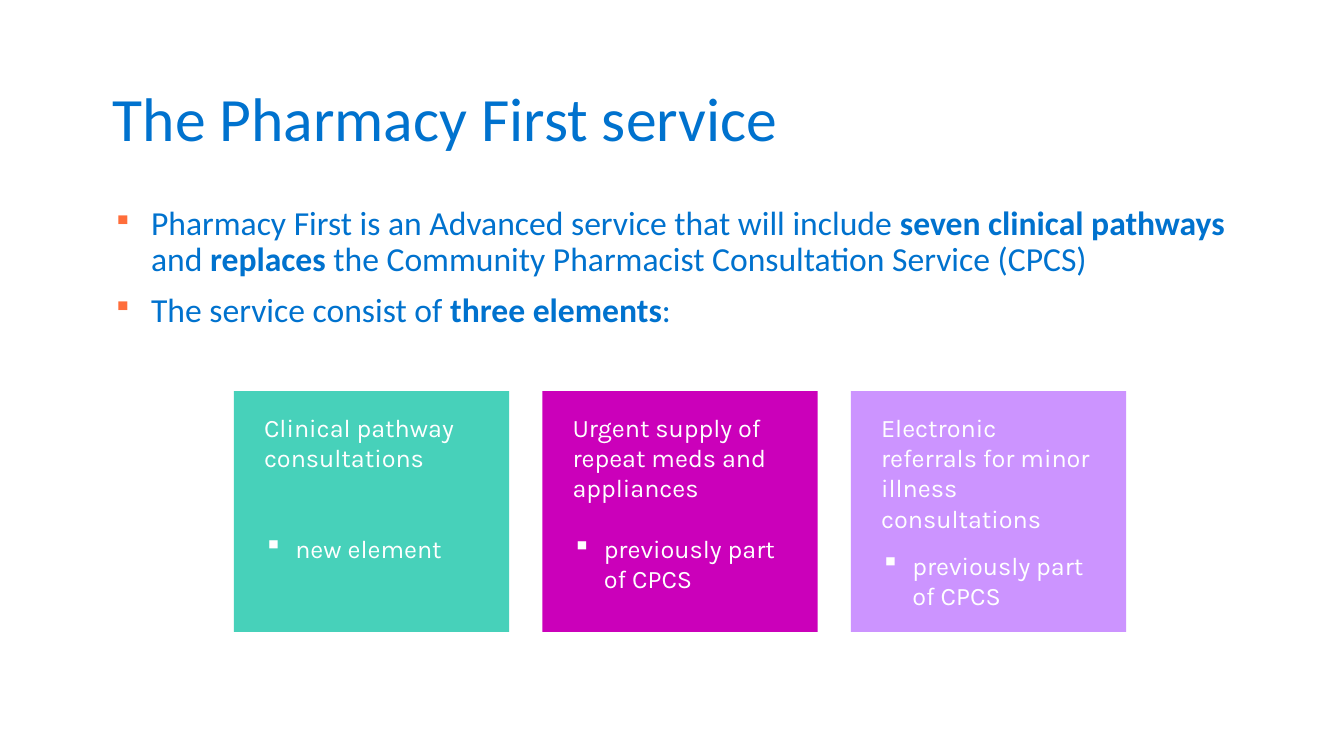
from dataclasses import dataclass

from lxml import etree
from pptx import Presentation
from pptx import util as u
from pptx.dml.color import RGBColor
from pptx.enum import shapes, text
from pptx.oxml.ns import qn

EMU_PER_PX = 9144  # 100 px to the inch
COLOURS = {
    "blue": "0072CE",
    "orange": "FF6D3A",
    "white": "FFFFFF",
    "teal": "47D1BA",
    "magenta": "CB00BA",
    "lilac": "CC94FF",
}


@dataclass
class Style:
    font: str
    size: int
    colour: str


@dataclass
class Bullet:
    indent: int
    colour: str
    percent: int = 100


@dataclass
class Paragraph:
    runs: list[tuple[str, bool]]  # wording, bold
    bullet: Bullet | None = None
    before: float = 0
    line_spacing: float = 1.0


@dataclass
class Card:
    heading: str
    note: str
    colour: str
    gap: float  # points between heading and note


TITLE_STYLE = Style("Calibri", 44, "blue")
BODY_STYLE = Style("Calibri", 24, "blue")
CARD_STYLE = Style("Karla", 18, "white")
BODY_BULLET = Bullet(38, "orange", 80)
CARD_BULLET = Bullet(31, "white")

TITLE = [Paragraph([("The Pharmacy First service", False)], line_spacing=1.1)]
BODY = [
    Paragraph([
        ("Pharmacy First is an Advanced service that will include ", False),
        ("seven clinical pathways", True),
        (" and ", False),
        ("replaces", True),
        (" the Community Pharmacist Consultation Service (CPCS)", False),
    ], BODY_BULLET, line_spacing=0.9),
    Paragraph([
        ("The service consist of ", False),
        ("three elements", True),
        (":", False),
    ], BODY_BULLET, before=10, line_spacing=0.9),
]
CARDS = [
    Card("Clinical pathway consultations", "new element", "teal", 43),
    Card("Urgent supply of repeat meds and appliances",
         "previously part of CPCS", "magenta", 21.5),
    Card("Electronic referrals for minor illness consultations",
         "previously part of CPCS", "lilac", 12),
]
CARD_LEFT, CARD_TOP, CARD_WIDTH, CARD_HEIGHT, CARD_STEP = 232, 388, 273, 239, 306
TEXT_INSET_X, TEXT_INSET_Y, TEXT_WIDTH, TEXT_HEIGHT = 20, 16, 232, 210


def px(value: int) -> int:
    return u.Emu(value * EMU_PER_PX)


def rgb(name: str) -> RGBColor:
    return RGBColor.from_string(COLOURS[name])


def add_bullet(paragraph, bullet: Bullet) -> None:
    properties = paragraph._p.get_or_add_pPr()
    properties.set("marL", str(px(bullet.indent)))
    properties.set("indent", str(-px(bullet.indent)))
    colour = etree.SubElement(properties, qn("a:buClr"))
    etree.SubElement(colour, qn("a:srgbClr"), val=COLOURS[bullet.colour])
    etree.SubElement(properties, qn("a:buSzPct"), val=str(bullet.percent * 1000))
    etree.SubElement(properties, qn("a:buChar"), char="▪")


def add_text(slide, left: int, top: int, width: int, height: int,
             paragraphs: list[Paragraph], style: Style,
             anchor=text.MSO_ANCHOR.TOP) -> None:
    frame = slide.shapes.add_textbox(px(left), px(top), px(width), px(height)).text_frame
    frame.word_wrap = True
    frame.vertical_anchor = anchor
    for index, item in enumerate(paragraphs):
        paragraph = frame.add_paragraph() if index else frame.paragraphs[0]
        if item.bullet:
            add_bullet(paragraph, item.bullet)
        paragraph.line_spacing = item.line_spacing
        if item.before:
            paragraph.space_before = u.Pt(item.before)
        for wording, bold in item.runs:
            run = paragraph.add_run()
            run.text = wording
            run.font.name = style.font
            run.font.size = u.Pt(style.size)
            run.font.bold = bold
            run.font.color.rgb = rgb(style.colour)


def add_card(slide, card: Card, left: int) -> None:
    shape = slide.shapes.add_shape(shapes.MSO_SHAPE.RECTANGLE, px(left), px(CARD_TOP),
                                   px(CARD_WIDTH), px(CARD_HEIGHT))
    shape.shadow.inherit = False
    shape.fill.solid()
    shape.fill.fore_color.rgb = rgb(card.colour)
    shape.line.fill.background()
    paragraphs = [
        Paragraph([(card.heading, False)]),
        Paragraph([(card.note, False)], CARD_BULLET, before=card.gap),
    ]
    add_text(slide, left + TEXT_INSET_X, CARD_TOP + TEXT_INSET_Y,
             TEXT_WIDTH, TEXT_HEIGHT, paragraphs, CARD_STYLE)


def main() -> None:
    presentation = Presentation()
    presentation.slide_width = px(1333)
    presentation.slide_height = px(750)
    slide = presentation.slides.add_slide(presentation.slide_layouts[6])

    # Title and introduction
    add_text(slide, 102, 40, 1139, 145, TITLE, TITLE_STYLE, text.MSO_ANCHOR.MIDDLE)
    add_text(slide, 102, 200, 1139, 476, BODY, BODY_STYLE)

    # The three elements of the service
    for index, card in enumerate(CARDS):
        add_card(slide, card, CARD_LEFT + index * CARD_STEP)

    presentation.save("out.pptx")


if __name__ == "__main__":
    main()
